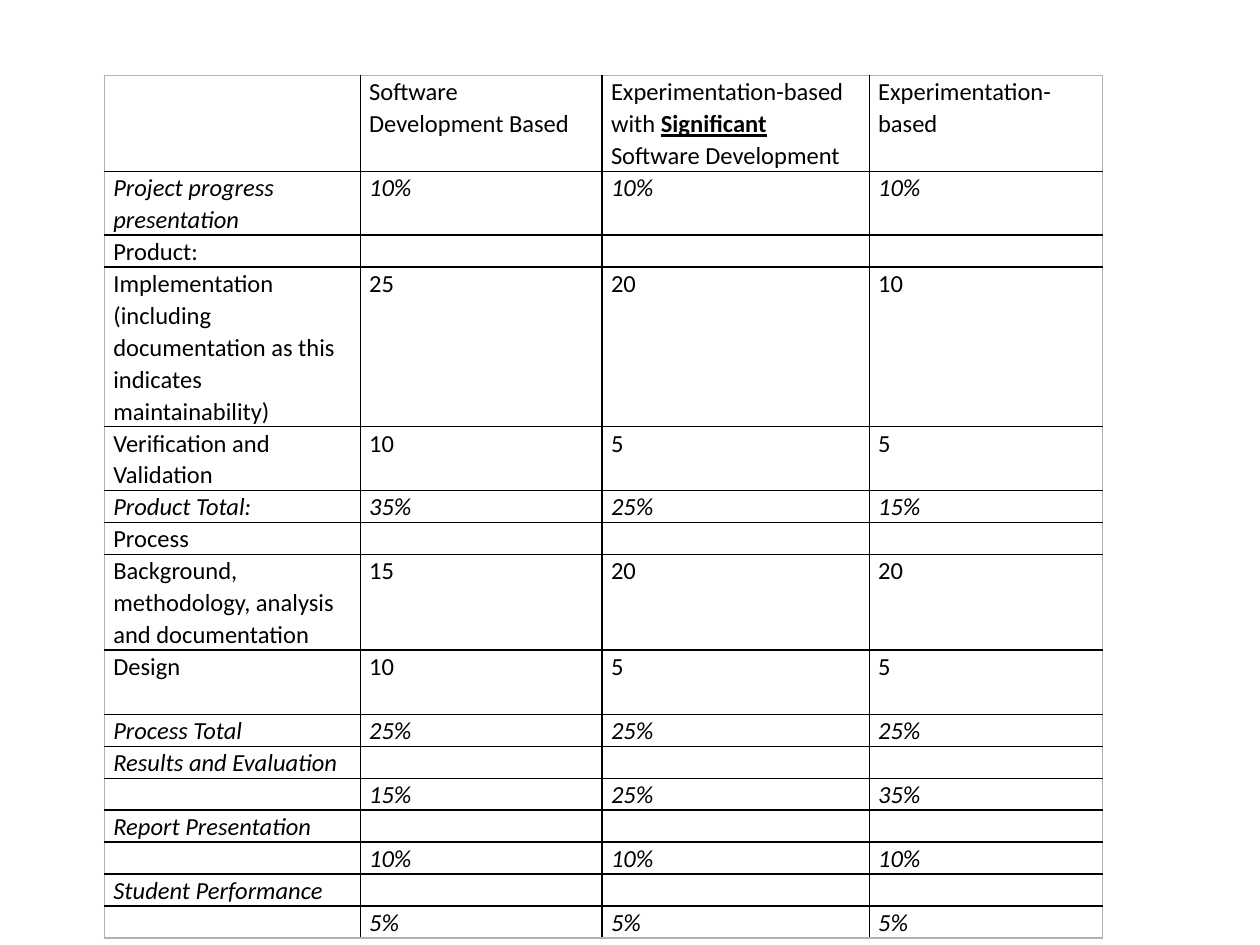
from lxml import etree
from pptx import Presentation
from pptx.dml.color import RGBColor
from pptx.oxml import parse_xml
from pptx.oxml.ns import nsdecls, qn
from pptx.util import Inches, Pt

COLORS = {"text": "000000", "inner": "000000", "outer": "B2B2B2"}
FONT, SIZE = "Calibri", 14
LEFT, TOP = 0.83, 0.6
COL_WIDTHS = [2.03, 1.92, 2.12, 1.85]
EMPHASIS = "Significant"

# row height, italic, cell texts
ROWS = [
    (0.72, False, ["", "Software Development Based",
                   "Experimentation-based with Significant Software Development",
                   "Experimentation-based"]),
    (0.48, True, ["Project progress presentation", "10%", "10%", "10%"]),
    (0.23, False, ["Product:", "", "", ""]),
    (0.97, False, ["Implementation (including documentation as this indicates "
                   "maintainability)", "25", "20", "10"]),
    (0.48, False, ["Verification and Validation", "10", "5", "5"]),
    (0.23, True, ["Product Total:", "35%", "25%", "15%"]),
    (0.23, False, ["Process", "", "", ""]),
    (0.72, False, ["Background, methodology, analysis and documentation",
                   "15", "20", "20"]),
    (0.51, False, ["Design", "10", "5", "5"]),
    (0.23, True, ["Process Total", "25%", "25%", "25%"]),
    (0.23, True, ["Results and Evaluation", "", "", ""]),
    (0.23, True, ["", "15%", "25%", "35%"]),
    (0.23, True, ["Report Presentation", "", "", ""]),
    (0.23, True, ["", "10%", "10%", "10%"]),
    (0.23, True, ["Student Performance", "", "", ""]),
    (0.23, True, ["", "5%", "5%", "5%"]),
]


def set_borders(cell, on_edge):
    """Draw all four borders; on_edge maps a side to whether it is an outer one."""
    tc_pr = cell._tc.get_or_add_tcPr()
    for i, (side, edge) in enumerate(on_edge.items()):
        color = COLORS["outer" if edge else "inner"]
        tc_pr.insert(i, parse_xml(
            f'<a:ln{side} {nsdecls("a")} w="{Pt(1)}"><a:solidFill>'
            f'<a:srgbClr val="{color}"/></a:solidFill></a:ln{side}>'))


def write_cell(cell, text, italic):
    cell.margin_left = cell.margin_right = Inches(0.07)
    cell.margin_top = cell.margin_bottom = 0
    cell.fill.background()
    p = cell.text_frame.paragraphs[0]
    p.line_spacing = 1.07
    if not text:
        # an empty cell takes its line height from the end-of-paragraph size
        etree.SubElement(p._p, qn("a:endParaRPr"), sz=str(SIZE * 100))
        return
    before, mark, after = text.partition(EMPHASIS)
    for part in filter(None, (before, mark, after)):
        r = p.add_run()
        r.text = part
        r.font.name, r.font.size, r.font.italic = FONT, Pt(SIZE), italic
        r.font.bold = r.font.underline = part == EMPHASIS
        r.font.color.rgb = RGBColor.from_string(COLORS["text"])


prs = Presentation()
prs.slide_width, prs.slide_height = Inches(10), Inches(7.5)
s = prs.slides.add_slide(prs.slide_layouts[6])

n_rows, n_cols = len(ROWS), len(COL_WIDTHS)
table = s.shapes.add_table(
    n_rows, n_cols, Inches(LEFT), Inches(TOP), Inches(sum(COL_WIDTHS)),
    Inches(sum(height for height, _, _ in ROWS))).table
table.first_row = table.horz_banding = False
for column, width in zip(table.columns, COL_WIDTHS):
    column.width = Inches(width)

for i, (height, italic, texts) in enumerate(ROWS):
    table.rows[i].height = Inches(height)
    for j, text in enumerate(texts):
        cell = table.cell(i, j)
        write_cell(cell, text, italic)
        set_borders(cell, {"L": j == 0, "R": j == n_cols - 1,
                           "T": i == 0, "B": i == n_rows - 1})

prs.save("out.pptx")
